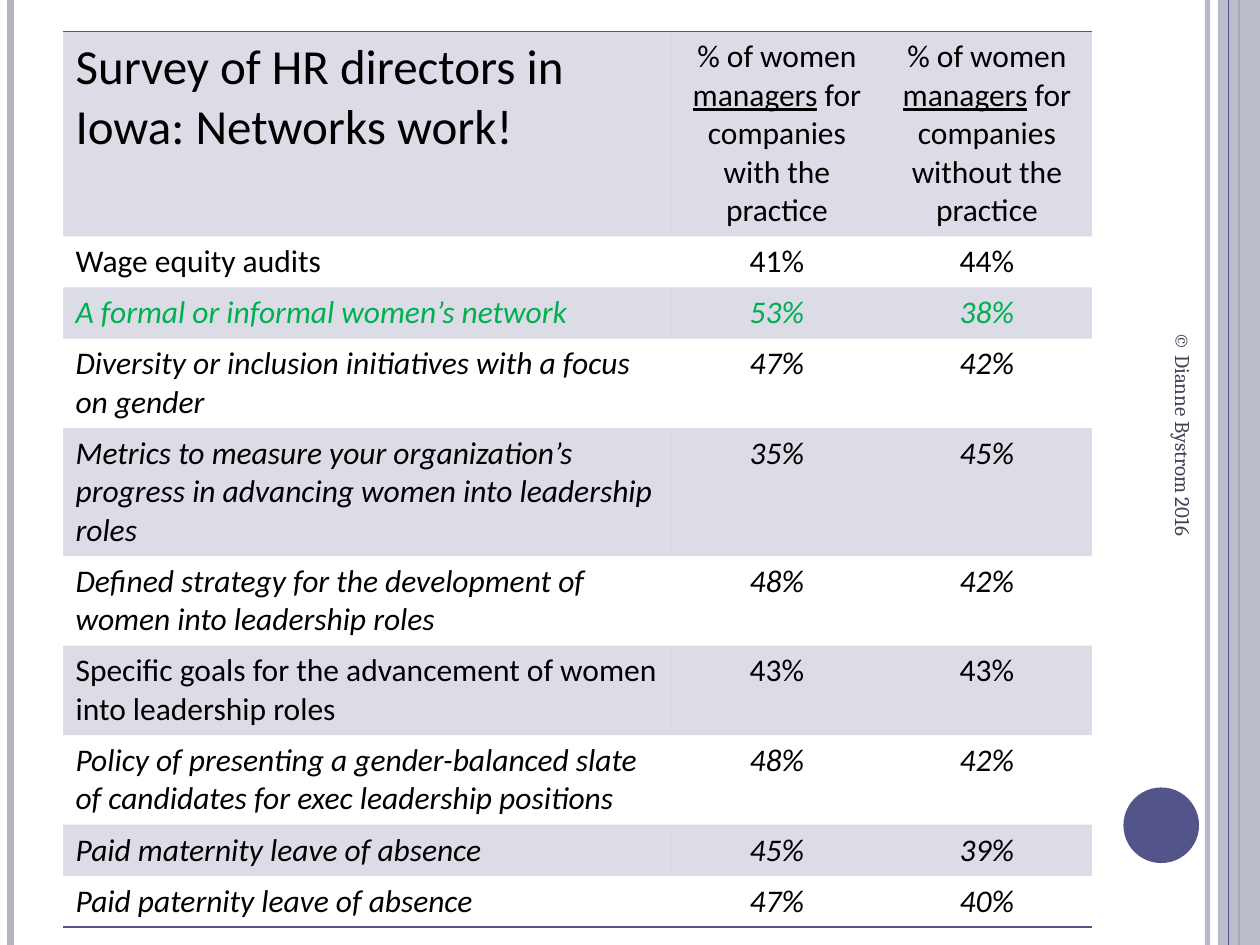
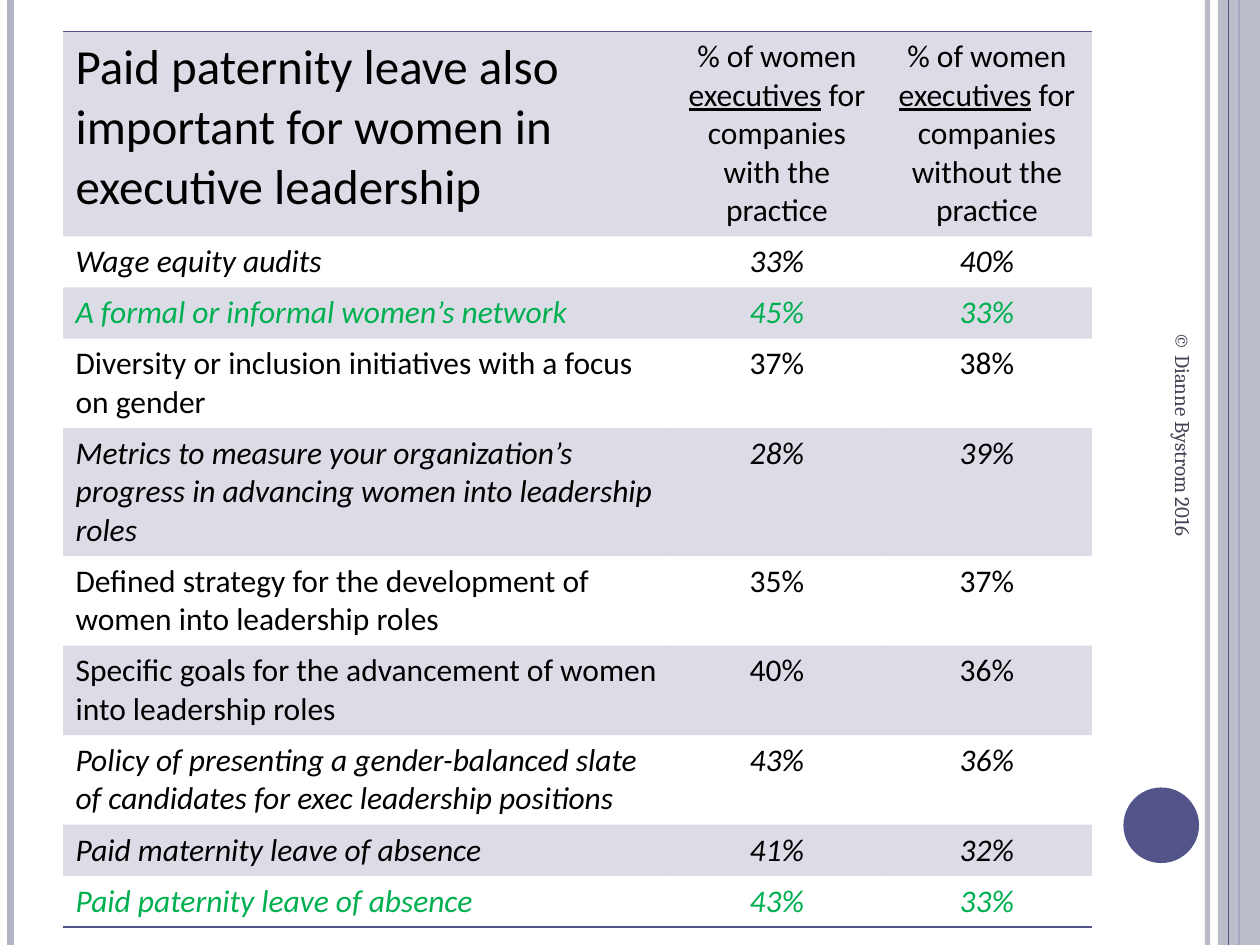
from lxml import etree
from pptx import Presentation
from pptx import util as u
from pptx.dml.color import RGBColor
from pptx.enum import shapes, text
from pptx.oxml.ns import qn

COLUMNS, ROWS = 120, 90  # one grid unit is 1/12 inch both ways
WIDTH, HEIGHT = u.Inches(10), u.Inches(7.5)
INDIGO, LAVENDER, SLATE = "53548A", "B3B4C4", "424456"
BLACK, GREEN = "000000", "00B050"
NO_TABLE_STYLE = "{2D5ABB26-0587-4C30-8999-92F81FD0307C}"

PRACTICES = [  # practice, lines of text it takes
    ("Wage equity audits", 1),
    ("A formal or informal women’s network", 1),
    ("Diversity or inclusion initiatives with a focus on gender", 2),
    ("Metrics to measure your organization’s progress in advancing women into leadership roles", 3),
    ("Defined strategy for the development of women into leadership roles", 2),
    ("Specific goals for the advancement of women into leadership roles", 2),
    ("Policy of presenting a gender-balanced slate of candidates for exec leadership positions", 2),
    ("Paid maternity leave of absence", 1),
    ("Paid paternity leave of absence", 1),
]
HEADER_LINES = 5

SURVEYS = [
    {"title": "Survey of HR directors in Iowa: Networks work!",
     "group": "managers",
     "shares": [(41, 44), (53, 38), (47, 42), (35, 45), (48, 42),
                (43, 43), (48, 42), (45, 39), (47, 40)],
     "upright": {0, 5},
     "highlighted": {1}},
    {"title": "Paid paternity leave also important for women in executive leadership",
     "group": "executives",
     "shares": [(33, 40), (45, 33), (37, 38), (28, 39), (35, 37),
                (40, 36), (43, 36), (41, 32), (43, 33)],
     "upright": {2, 4, 5},
     "highlighted": {1, 8}},
]


def rgb(code):
    return RGBColor.from_string(code)


def x(columns):
    return round(WIDTH * columns / COLUMNS)


def y(rows):
    return round(HEIGHT * rows / ROWS)


def set_opacity(element, percent):
    for color in element.iter(qn("a:srgbClr")):
        etree.SubElement(color, qn("a:alpha"), val=str(percent * 1000))


def set_border(cell, side, color, points=1):
    border = etree.Element(qn(f"a:ln{side}"), w=str(u.Pt(points)))
    fill = etree.SubElement(border, qn("a:solidFill"))
    etree.SubElement(fill, qn("a:srgbClr"), val=color)
    cell._tc.get_or_add_tcPr().insert(0, border)


class Deck:
    def __init__(self):
        self.presentation = Presentation()
        self.presentation.slide_width, self.presentation.slide_height = WIDTH, HEIGHT
        self.slide = None

    def new_slide(self):
        self.slide = self.presentation.slides.add_slide(self.presentation.slide_layouts[6])

    def stripe(self, column, color, points, opacity=100):
        """Draw a vertical line over the full height of the slide."""
        line = self.slide.shapes.add_connector(
            shapes.MSO_CONNECTOR.STRAIGHT, x(column), 0, x(column), HEIGHT)
        line.line.color.rgb = rgb(color)
        line.line.width = u.Pt(points)
        properties = line._element.spPr
        set_opacity(properties, opacity)
        etree.SubElement(properties, qn("a:effectLst"))

    def solid(self, kind, left, top, width, height, color, opacity=100):
        solid = self.slide.shapes.add_shape(kind, x(left), y(top), x(width), y(height))
        solid.shadow.inherit = False
        solid.fill.solid()
        solid.fill.fore_color.rgb = rgb(color)
        set_opacity(solid._element.spPr, opacity)
        solid.line.fill.background()

    def frame(self):
        """Draw the side bands and the disc that every slide carries."""
        self.stripe(115, LAVENDER, 3, opacity=93)
        self.stripe(1, LAVENDER, 4.5)
        self.stripe(118, INDIGO, 1.5)
        self.solid(shapes.MSO_SHAPE.RECTANGLE, 116, 0, 4, ROWS, LAVENDER, opacity=87)
        self.stripe(117, INDIGO, 0.75)
        self.solid(shapes.MSO_SHAPE.OVAL, 107, 75, 7.2, 7.2, INDIGO)

    def footer(self, wording):
        footer = self.slide.shapes.add_textbox(x(91.7), y(49.1), x(42), y(4.8))
        footer.rotation = 90
        footer.text_frame.word_wrap = True
        footer.text_frame.vertical_anchor = text.MSO_ANCHOR.MIDDLE
        self.put_text(footer.text_frame, [wording], 12, SLATE, font="Cambria")

    def put_text(self, frame, pieces, size, color=BLACK, font="Calibri",
                 italic=False, centred=False):
        """Fill one paragraph; every second piece is underlined."""
        paragraph = frame.paragraphs[0]
        paragraph.alignment = text.PP_ALIGN.CENTER if centred else text.PP_ALIGN.LEFT
        paragraph.font.name = font
        paragraph.font.size = u.Pt(size)
        paragraph.font.color.rgb = rgb(color)
        paragraph.font.italic = italic
        for index, piece in enumerate(pieces):
            run = paragraph.add_run()
            run.text = piece
            if index % 2:
                run.font.underline = True

    def survey_table(self, title, group, shares, upright, highlighted):
        line_counts = [HEADER_LINES] + [lines for _, lines in PRACTICES]
        heights = [1.2 + 3.6 * lines for lines in line_counts]
        widths = [58, 20, 20]
        table_frame = self.slide.shapes.add_table(
            len(heights), len(widths), x(6), y(3), x(sum(widths)), y(sum(heights)))
        table = table_frame.table
        table.first_row = table.horz_banding = False
        table._tbl.tblPr.find(qn("a:tableStyleId")).text = NO_TABLE_STYLE
        for column, width in zip(table.columns, widths):
            column.width = x(width)
        for row, height in zip(table.rows, heights):
            row.height = y(height)

        self.put_text(table.cell(0, 0).text_frame, [title], 28)
        for column, word in enumerate(("with", "without"), 1):
            heading = ["% of women ", group, f" for companies {word} the practice"]
            self.put_text(table.cell(0, column).text_frame, heading, 18, centred=True)

        for index, ((practice, _), pair) in enumerate(zip(PRACTICES, shares)):
            entries = [practice] + [f"{share}%" for share in pair]
            for column, entry in enumerate(entries):
                self.put_text(table.cell(index + 1, column).text_frame, [entry], 18,
                              color=GREEN if index in highlighted else BLACK,
                              italic=index not in upright, centred=column > 0)
        self.band(table)

    def band(self, table):
        """Tint every second row and rule off the table's top and bottom."""
        last = len(table.rows) - 1
        for index, row in enumerate(table.rows):
            for cell in row.cells:
                if index % 2:
                    cell.fill.background()
                else:
                    cell.fill.solid()
                    cell.fill.fore_color.rgb = rgb(INDIGO)
                    set_opacity(cell._tc.tcPr, 20)
                if index == 0:
                    set_border(cell, "T", INDIGO)
                elif index == last:
                    set_border(cell, "B", INDIGO)


def main():
    deck = Deck()
    for survey in SURVEYS:
        deck.new_slide()
        deck.frame()
        deck.survey_table(**survey)
        deck.footer("© Dianne Bystrom 2016")
    deck.presentation.save("out.pptx")


if __name__ == "__main__":
    main()
